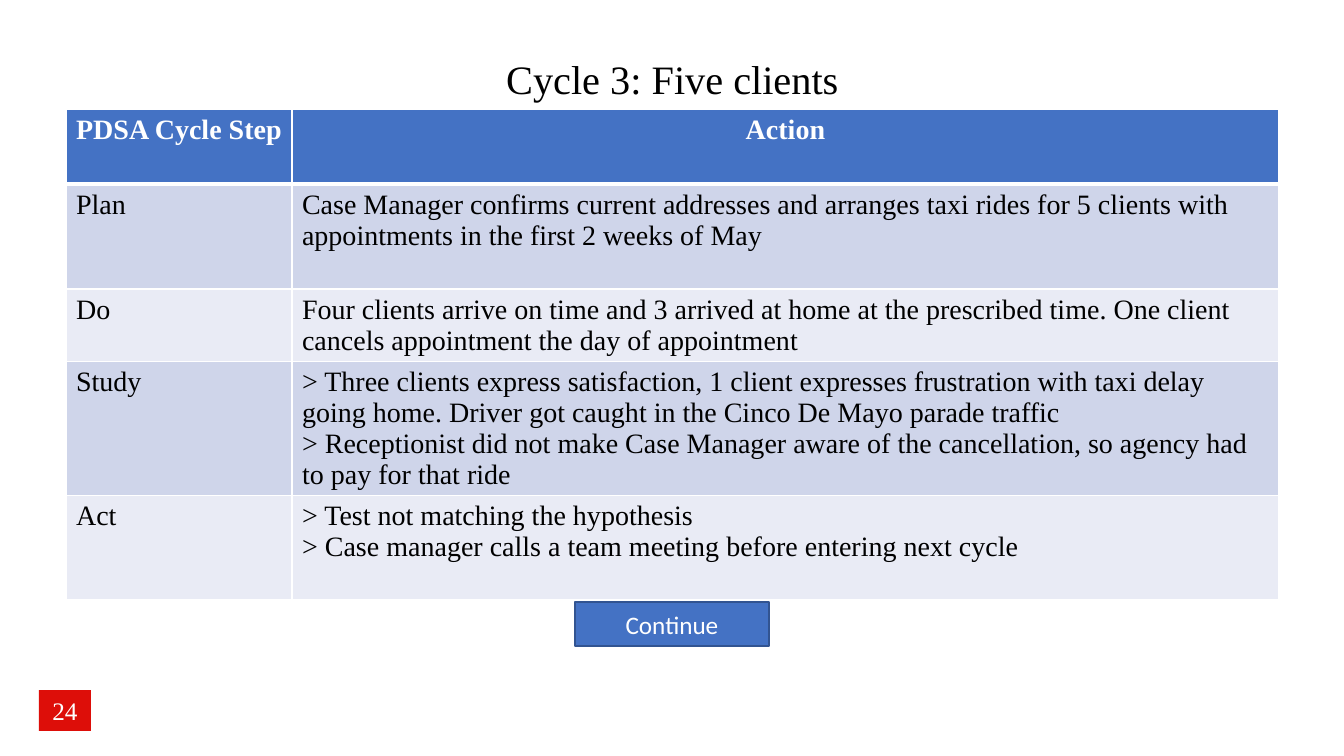
from dataclasses import dataclass

import lxml.etree
import pptx
import pptx.dml.color
import pptx.enum.shapes
import pptx.enum.text
import pptx.oxml.ns
import pptx.util

TITLE = "Cycle 3: Five clients"
HEADER = ("PDSA Cycle Step", ["Action"])
STEPS = [
    ("Plan", ["Case Manager confirms current addresses and arranges taxi rides for "
              "5 clients with appointments in the first 2 weeks of May"]),
    ("Do", ["Four clients arrive on time and 3 arrived at home at the prescribed time. "
            "One client cancels appointment the day of appointment"]),
    ("Study", ["> Three clients express satisfaction, 1 client expresses frustration with "
               "taxi delay going home. Driver got caught in the Cinco De Mayo parade traffic",
               "> Receptionist did not make Case Manager aware of the cancellation, "
               "so agency had to pay for that ride"]),
    ("Act", ["> Test not matching the hypothesis",
             "> Case manager calls a team meeting before entering next cycle"]),
]
BUTTON = "Continue"
PAGE_NUMBER = "24"

# Lengths in px: left, top, width, height
SLIDE_SIZE = (1344, 756)
TITLE_BOX = (93, 55, 1159, 53)
TABLE_ORIGIN = (66, 109)
COLUMN_WIDTHS = (226, 987)
ROW_HEIGHTS = (75, 105, 72, 134, 104)
BUTTON_BOX = (575, 602, 194, 44)
NUMBER_BOX = (39, 690, 52, 41)


@dataclass(frozen=True)
class Theme:
    serif: str = "Times New Roman"
    sans: str = "Calibri"
    black: str = "000000"
    white: str = "FFFFFF"
    blue: str = "4472C4"
    blue_edge: str = "325491"
    red: str = "DD0E09"
    bands: tuple = ("CFD5EA", "E9EBF5")
    title_size: float = 28.8
    table_size: int = 20
    label_size: int = 18
    rule: int = 1
    header_rule: int = 3


THEME = Theme()
CENTER = pptx.enum.text.PP_ALIGN.CENTER
MIDDLE = pptx.enum.text.MSO_ANCHOR.MIDDLE


def px(length):
    return pptx.util.Emu(round(length * 914400 / 100.8))


def rgb(color):
    return pptx.dml.color.RGBColor.from_string(color)


def write(text_frame, lines, size, color, font=THEME.serif, bold=False, align=None):
    text_frame.text = "\n".join(lines)
    for paragraph in text_frame.paragraphs:
        paragraph.alignment = align
        paragraph.font.name = font
        paragraph.font.size = pptx.util.Pt(size)
        paragraph.font.bold = bold
        paragraph.font.color.rgb = rgb(color)


def set_borders(cell, widths):
    """Draw white cell borders; widths maps a side (L, R, T, B) to points."""
    properties = cell._tc.get_or_add_tcPr()
    for side, width in widths.items():
        line = lxml.etree.SubElement(properties, pptx.oxml.ns.qn(f"a:ln{side}"),
                                     w=str(pptx.util.Pt(width)))
        fill = lxml.etree.SubElement(line, pptx.oxml.ns.qn("a:solidFill"))
        lxml.etree.SubElement(fill, pptx.oxml.ns.qn("a:srgbClr"), val=THEME.white)


def add_title(slide):
    title = slide.shapes.title
    title.left, title.top, title.width, title.height = map(px, TITLE_BOX)
    title.text_frame.vertical_anchor = MIDDLE
    write(title.text_frame, [TITLE], THEME.title_size, THEME.black, align=CENTER)
    title.text_frame.paragraphs[0].line_spacing = 0.9


def add_cycle_table(slide):
    rows = [HEADER, *STEPS]
    size = (sum(COLUMN_WIDTHS), sum(ROW_HEIGHTS))
    table = slide.shapes.add_table(len(rows), len(COLUMN_WIDTHS),
                                   *map(px, TABLE_ORIGIN + size)).table
    for column, width in zip(table.columns, COLUMN_WIDTHS):
        column.width = px(width)
    for index, (step, actions) in enumerate(rows):
        table.rows[index].height = px(ROW_HEIGHTS[index])
        is_header = index == 0
        for cell, lines in zip(table.rows[index].cells, ([step], actions)):
            set_borders(cell, {
                "L": THEME.rule,
                "R": THEME.rule,
                "T": THEME.header_rule if index == 1 else THEME.rule,
                "B": THEME.header_rule if is_header else THEME.rule,
            })
            cell.fill.solid()
            cell.fill.fore_color.rgb = rgb(
                THEME.blue if is_header else THEME.bands[(index - 1) % 2])
            write(cell.text_frame, lines, THEME.table_size,
                  THEME.white if is_header else THEME.black,
                  bold=is_header, align=CENTER if is_header else None)


def add_label(slide, box, text, fill, font, edge=None):
    shape = slide.shapes.add_shape(pptx.enum.shapes.MSO_SHAPE.RECTANGLE, *map(px, box))
    shape.shadow.inherit = False
    shape.fill.solid()
    shape.fill.fore_color.rgb = rgb(fill)
    if edge:
        shape.line.color.rgb = rgb(edge)
        shape.line.width = pptx.util.Pt(THEME.rule)
    else:
        shape.line.fill.background()
    shape.text_frame.vertical_anchor = MIDDLE
    write(shape.text_frame, [text], THEME.label_size, THEME.white, font, align=CENTER)


def main():
    presentation = pptx.Presentation()
    presentation.slide_width, presentation.slide_height = map(px, SLIDE_SIZE)
    title_only = presentation.slide_layouts[5]
    slide = presentation.slides.add_slide(title_only)
    add_title(slide)
    add_cycle_table(slide)
    add_label(slide, BUTTON_BOX, BUTTON, THEME.blue, THEME.sans, THEME.blue_edge)
    add_label(slide, NUMBER_BOX, PAGE_NUMBER, THEME.red, THEME.serif)
    presentation.save("out.pptx")


if __name__ == "__main__":
    main()
